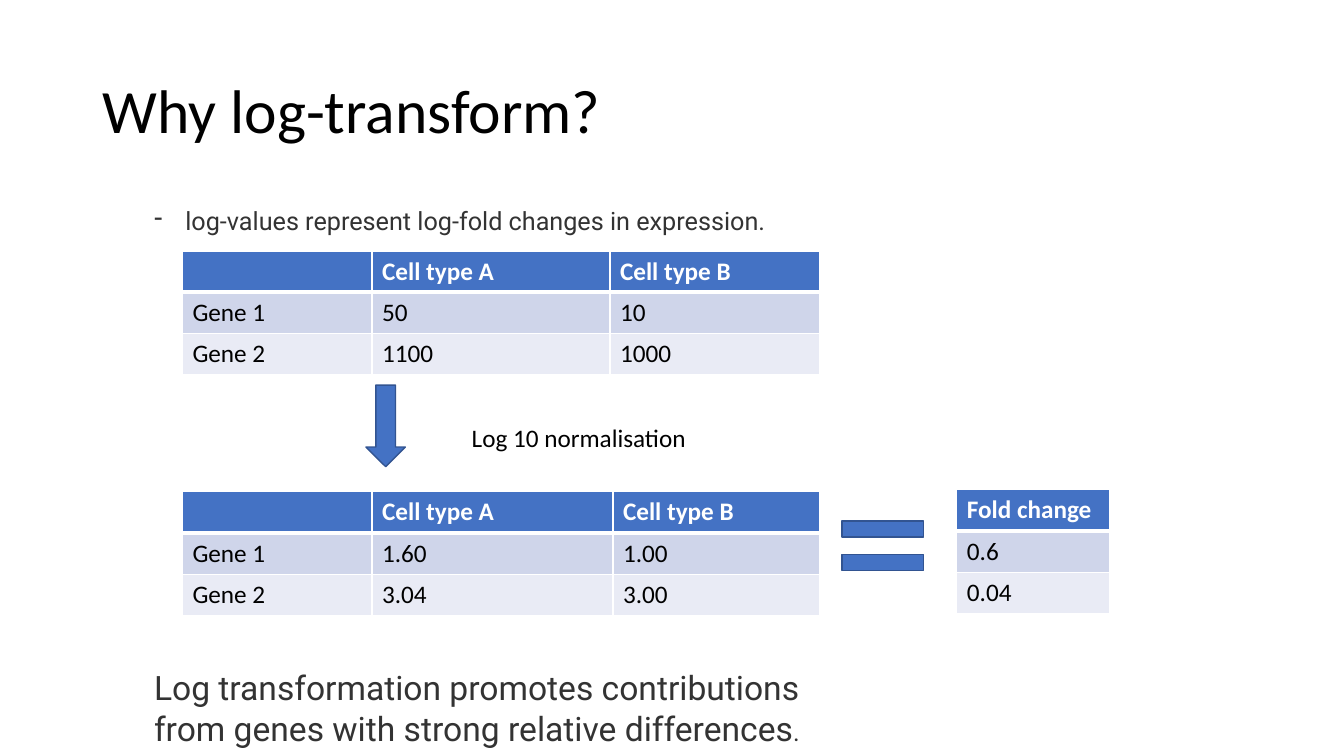
from pptx import Presentation
from pptx.dml.color import RGBColor
from pptx.enum.shapes import MSO_SHAPE
from pptx.enum.text import MSO_ANCHOR
from pptx.util import Inches, Pt
from lxml.etree import SubElement
from pptx.oxml.ns import qn

HUES = {"blue": "4472C4", "edge": "325491", "odd": "CFD5EA", "even": "E9EBF5",
        "white": "FFFFFF", "black": "000000", "gray": "333333"}
HUE = {name: RGBColor.from_string(code) for name, code in HUES.items()}
ROW = 0.41

deck = Presentation()
deck.slide_width, deck.slide_height = Inches(13.33), Inches(7.5)
slide = deck.slides.add_slide(deck.slide_layouts[6])


def style(para, size, face="Calibri", hue="black", bold=False):
    font = para.font
    font.size, font.name, font.bold = Pt(size), face, bold
    font.color.rgb = HUE[hue]


def write(place, text, size, face, hue, wrap):
    frame = slide.shapes.add_textbox(*map(Inches, place)).text_frame
    frame.word_wrap = wrap
    para = frame.paragraphs[0]
    para.text = text
    style(para, size, face, hue)
    return frame


title = write((0.92, 0.4, 11.5, 1.45), "Why log-transform?", 44, "Calibri", "black", True)
title.vertical_anchor = MSO_ANCHOR.MIDDLE
title.paragraphs[0].line_spacing = 0.9

point = write((1.43, 1.99, 6.35, 0.4), "log-values represent log-fold changes in expression.",
              18, "Roboto", "gray", False)
props = point.paragraphs[0]._p.get_or_add_pPr()
props.set("marL", str(Inches(0.31)))
props.set("indent", str(-Inches(0.31)))
mark = props.makeelement(qn("a:buChar"), {"char": "-"})
props.insert(0, mark)

head = ["", "Cell type A", "Cell type B"]
tables = [
    (1.81, 2.49, [1.88, 2.36, 2.08],
     [head, ["Gene 1", "50", "10"], ["Gene 2", "1100", "1000"]]),
    (1.81, 4.88, [1.88, 2.39, 2.05],
     [head, ["Gene 1", "1.60", "1.00"], ["Gene 2", "3.04", "3.00"]]),
    (9.49, 4.86, [1.52], [["Fold change"], ["0.6"], ["0.04"]]),
]
for left, top, widths, data in tables:
    size = (left, top, sum(widths), ROW * len(data))
    table = slide.shapes.add_table(len(data), len(widths), *map(Inches, size)).table
    for col, width in zip(table.columns, widths):
        col.width = Inches(width)
    for r, line in enumerate(data):
        for c, text in enumerate(line):
            cell = table.cell(r, c)
            for side in "LRTB":
                thick = (side == "B" and r == 0) or (side == "T" and r == 1)
                edge = SubElement(cell._tc.get_or_add_tcPr(), qn("a:ln" + side),
                                  w=str(Pt(3 if thick else 1)))
                paint = SubElement(edge, qn("a:solidFill"))
                SubElement(paint, qn("a:srgbClr"), val=HUES["white"])
            cell.fill.solid()
            cell.fill.fore_color.rgb = HUE[["blue", "odd", "even"][r]]
            cell.text = text
            style(cell.text_frame.paragraphs[0], 18,
                  hue="black" if r else "white", bold=r == 0)

for kind, place, turn in [
    (MSO_SHAPE.RIGHT_ARROW, (3.42, 4.03, 0.81, 0.39), 90),
    (MSO_SHAPE.RECTANGLE, (8.35, 5.17, 0.81, 0.16), 0),
    (MSO_SHAPE.RECTANGLE, (8.35, 5.5, 0.81, 0.16), 0),
]:
    shape = slide.shapes.add_shape(kind, *map(Inches, place))
    shape.rotation = turn
    shape.shadow.inherit = False
    shape.fill.solid()
    shape.fill.fore_color.rgb = HUE["blue"]
    shape.line.color.rgb = HUE["edge"]
    shape.line.width = Pt(1)

write((4.58, 4.14, 2.35, 0.4), "Log 10 normalisation", 18, "Calibri", "black", False)

close = write((1.43, 6.57, 6.67, 0.91),
              "Log transformation promotes contributions from genes "
              "with strong relative differences", 24, "Roboto", "gray", True)
stop = close.paragraphs[0].add_run()
stop.text = "."
stop.font.size = Pt(18)

deck.save("out.pptx")
